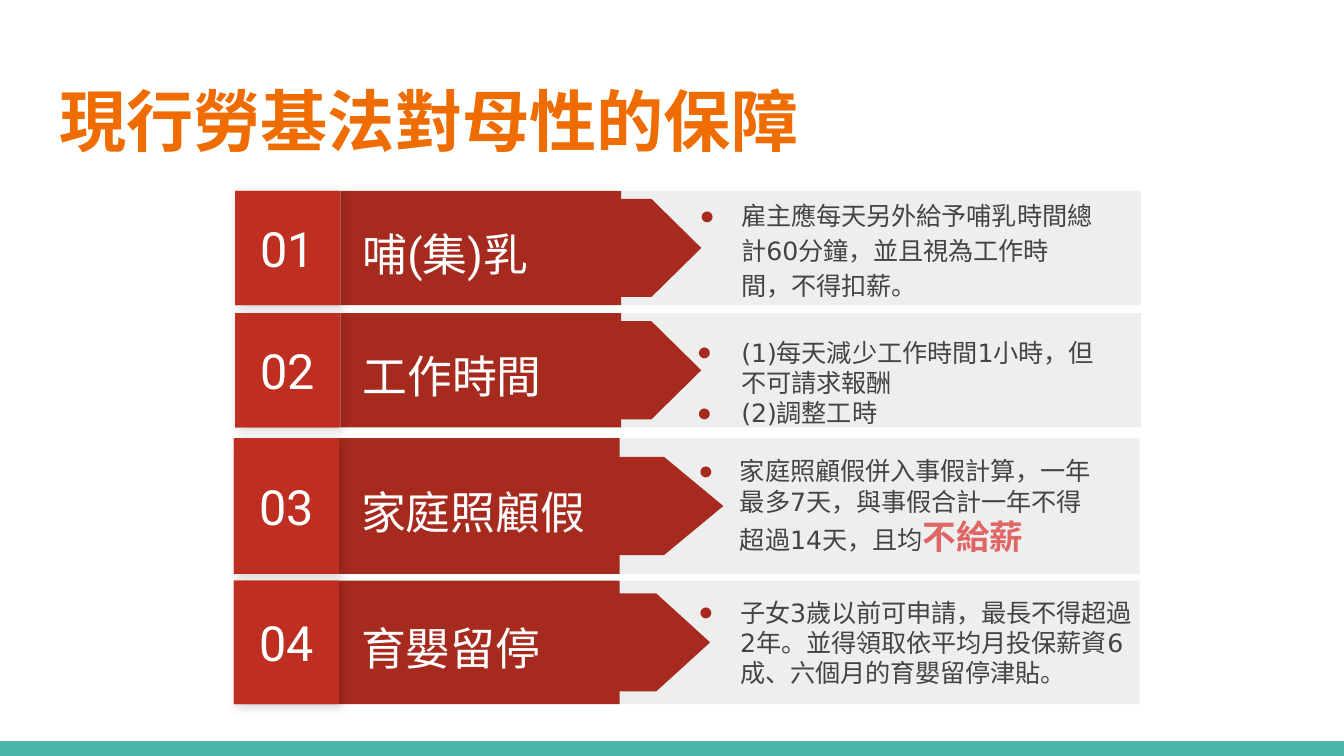
import pptx
import pptx.util
import pptx.dml.color
import pptx.enum.shapes
import pptx.enum.text
import pptx.oxml
import pptx.oxml.ns

Inches, Pt = pptx.util.Inches, pptx.util.Pt
RGBColor = pptx.dml.color.RGBColor
SHAPE = pptx.enum.shapes.MSO_SHAPE
ANCHOR = pptx.enum.text.MSO_ANCHOR
ALIGN = pptx.enum.text.PP_ALIGN

ORANGE = RGBColor(0xEF, 0x6C, 0x00)
TEAL = RGBColor(0x4D, 0xB6, 0xAC)
PALE_GREY = RGBColor(0xEE, 0xEE, 0xEE)
DARK_RED = RGBColor(0xA7, 0x2A, 0x1E)
PLATE_RED = RGBColor(0xB0, 0x2C, 0x20)
BRIGHT_RED = RGBColor(0xBE, 0x2F, 0x22)
ROSE = RGBColor(0xE0, 0x66, 0x66)
TEXT_GREY = RGBColor(0x44, 0x44, 0x44)
WHITE = RGBColor(0xFF, 0xFF, 0xFF)

SLIDE_W = 10
SLIDE_H = SLIDE_W * 9 / 16
ROW_W = 6.74
# Column edges of a row, as shares of its width
NUMBER_W, BAND_W = 0.116, 0.31
LABEL_X, LABEL_W = 0.126, 0.325
PANEL_X, DETAIL_X = 0.359, 0.47
ARROW_MIDDLE, ARROW_THICKNESS, ARROW_RATIO = 0.377, 0.73, 2.18

# Each detail is a list of paragraphs, each a list of (words, emphasised)
ROWS = [
    dict(label="哺(集)乳", left=1.75, top=1.42, height=0.85, spacing=1.15,
         detail=[[("雇主應每天另外給予哺乳時間總計60分鐘，並且視為工作時間，不得扣薪。", False)]]),
    dict(label="工作時間", left=1.75, top=2.33, height=0.85, detail_drop=0.09, hang=0.33,
         detail=[[("(1)每天減少工作時間1小時，但不可請求報酬", False)],
                 [("(2)調整工時", False)]]),
    dict(label="家庭照顧假", left=1.74, top=3.26, height=1.01,
         detail=[[("家庭照顧假併入事假計算，一年最多7天，與事假合計一年不得超過14天，且均", False),
                  ("不給薪", True)]]),
    dict(label="育嬰留停", left=1.74, top=4.32, height=0.92, detail_w=3.65,
         detail=[[("子女3歲以前可申請，最長不得超過2年。"
                   "並得領取依平均月投保薪資6成、六個月的育嬰留停津貼。", False)]]),
]


def style_run(run, font, size, color, bold=False):
    run.font.name, run.font.size, run.font.bold = font, Pt(size), bold
    run.font.color.rgb = color


def prepare_frame(shape, anchor):
    frame = shape.text_frame
    frame.word_wrap = True
    frame.vertical_anchor = anchor
    frame.margin_left = frame.margin_right = Inches(0.1)
    frame.margin_top = frame.margin_bottom = Inches(0.1)
    return frame


def add_block(shapes, preset, box, color):
    block = shapes.add_shape(preset, *map(Inches, box))
    block.shadow.inherit = False
    block.fill.solid()
    block.fill.fore_color.rgb = color
    block.line.fill.background()
    return block


def add_words(shapes, box):
    return prepare_frame(shapes.add_textbox(*map(Inches, box)), ANCHOR.MIDDLE)


def cast_shadow(block):
    effects = block._element.spPr.find(pptx.oxml.ns.qn("a:effectLst"))
    effects.append(pptx.oxml.parse_xml(
        f'<a:outerShdw {pptx.oxml.ns.nsdecls("a")} blurRad="{Pt(5.6)}" dist="{Pt(2.2)}" '
        'dir="2700000" algn="bl" rotWithShape="0">'
        '<a:srgbClr val="000000"><a:alpha val="17000"/></a:srgbClr></a:outerShdw>'))


def add_bullet(paragraph, hang):
    """Hanging bullet; punctuation stays inside the text box."""
    properties = paragraph._p.get_or_add_pPr()
    properties.set("marL", str(Inches(0.5)))
    properties.set("indent", str(-Inches(hang)))
    properties.set("hangingPunct", "0")
    for tag in (f'buClr {{}}><a:srgbClr val="{DARK_RED}"/></a:buClr>',
                'buFont {} typeface="Arial"/>', 'buChar {} char="●"/>'):
        properties.append(pptx.oxml.parse_xml(
            "<a:" + tag.format(pptx.oxml.ns.nsdecls("a"))))


def fill_detail(frame, paragraphs, spacing, hang):
    for index, pieces in enumerate(paragraphs):
        paragraph = frame.paragraphs[0] if index == 0 else frame.add_paragraph()
        paragraph.line_spacing = spacing
        add_bullet(paragraph, hang)
        for words, emphasised in pieces:
            run = paragraph.add_run()
            run.text = words
            style_run(run, "DejaVu Sans", 18 if emphasised else 13.5,
                      ROSE if emphasised else TEXT_GREY, emphasised)


def add_row(slide, box, number, label, detail, spacing=1.0, hang=0.31,
            detail_drop=0, detail_w=3.36):
    """Numbered band with an arrow pointing at its explanation."""
    left, top, width, height = box
    shapes = slide.shapes.add_group_shape().shapes

    def column(start, share):
        return left + start * width, top, share * width, height

    add_block(shapes, SHAPE.RECTANGLE, column(PANEL_X, 1 - PANEL_X), PALE_GREY)
    add_block(shapes, SHAPE.RECTANGLE, column(NUMBER_W, BAND_W), DARK_RED)

    length = ARROW_RATIO * height
    arrow = add_block(shapes, SHAPE.FLOWCHART_OFFPAGE_CONNECTOR,
                      (left + ARROW_MIDDLE * width - ARROW_THICKNESS / 2,
                       top + (height - length) / 2, ARROW_THICKNESS, length), DARK_RED)
    arrow.rotation = 270

    heading = add_words(shapes, (left + LABEL_X * width, top + 0.12 * height,
                                 LABEL_W * width, 0.78 * height)).paragraphs[0]
    heading.text = label
    heading.line_spacing = 1.15
    style_run(heading.runs[0], "Roboto", 24, WHITE)

    cast_shadow(add_block(shapes, SHAPE.RECTANGLE, column(0, NUMBER_W), PLATE_RED))
    tile = add_block(shapes, SHAPE.RECTANGLE, column(0, NUMBER_W), BRIGHT_RED)
    numeral = prepare_frame(tile, ANCHOR.MIDDLE).paragraphs[0]
    numeral.text = f"{number:02d}"
    numeral.alignment = ALIGN.CENTER
    style_run(numeral.runs[0], "Roboto", 26, WHITE)

    explanation = add_words(shapes, (left + DETAIL_X * width, top + detail_drop,
                                     detail_w, height))
    fill_detail(explanation, detail, spacing, hang)


def add_title(slide, box, words):
    title = slide.shapes.title
    title.left, title.top, title.width, title.height = map(Inches, box)
    frame = prepare_frame(title, ANCHOR.TOP)
    frame.text = words
    frame.paragraphs[0].alignment = ALIGN.LEFT
    style_run(frame.paragraphs[0].runs[0], "Arial Narrow", 36, ORANGE, True)


def main():
    deck = pptx.Presentation()
    deck.slide_width, deck.slide_height = Inches(SLIDE_W), Inches(SLIDE_H)
    slide = deck.slides.add_slide(deck.slide_layouts.get_by_name("Title Only"))
    add_block(slide.shapes, SHAPE.RECTANGLE, (0, SLIDE_H - 0.11, SLIDE_W, 0.11), TEAL)
    add_title(slide, (0.34, 0.49, 9.32, 0.77), "現行勞基法對母性的保障")
    for number, row in enumerate(ROWS, start=1):
        content = dict(row)
        box = (content.pop("left"), content.pop("top"), ROW_W, content.pop("height"))
        add_row(slide, box, number, **content)
    deck.save("out.pptx")


if __name__ == "__main__":
    main()
